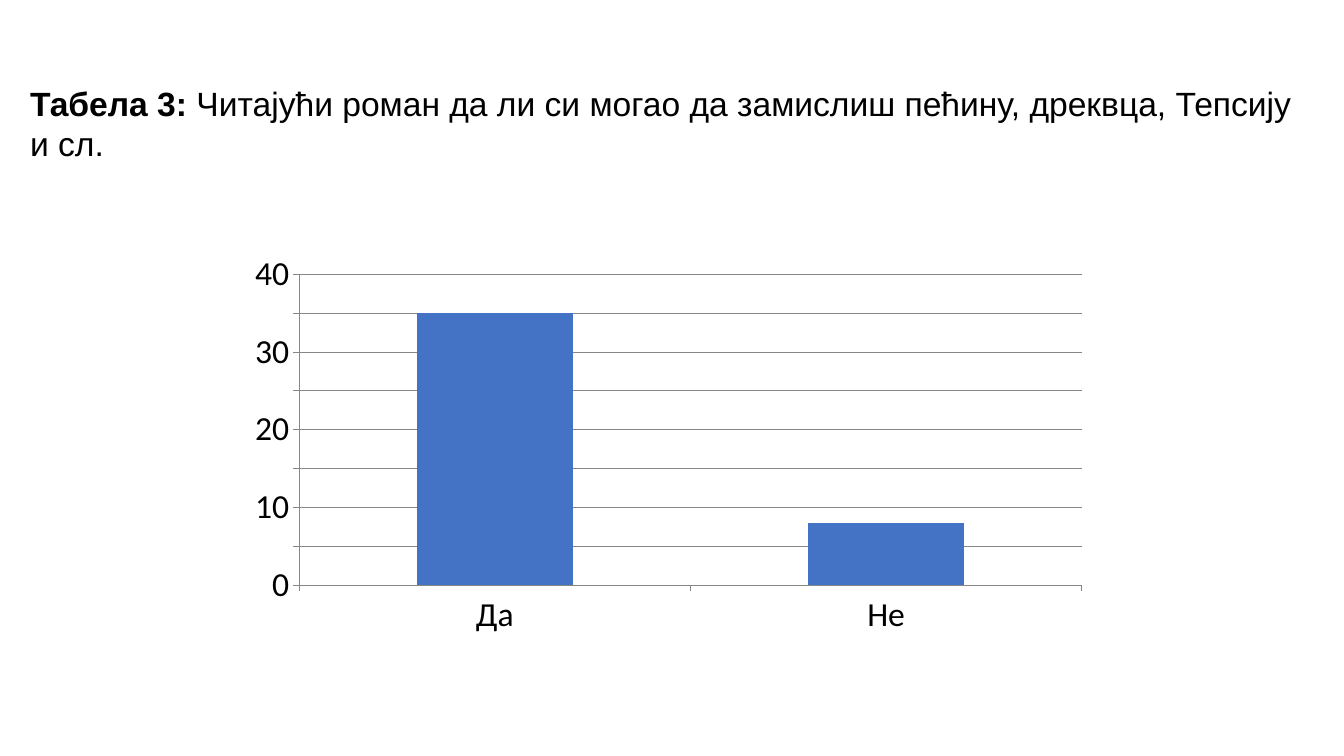
from pptx import Presentation, util as u
from pptx.chart.data import CategoryChartData
from pptx.dml.color import RGBColor
from pptx.enum import chart as ch, text

# Content
HEADING = [
    [("Табела 3:", True),
     (" Читајући роман да ли си могао да замислиш пећину, дреквца, Тепсију", False)],
    [("и сл.", False)],
]
ANSWERS = {"Да": 35, "Не": 8}
HEADING_BOX = (0.2, 0.39, 12.93, 1.31)
CHART_BOX = (2.36, 2.44, 8.54, 3.95)

BLACK = RGBColor(0x00, 0x00, 0x00)
BLUE = RGBColor(0x44, 0x72, 0xC4)
GRAY = RGBColor(0x87, 0x87, 0x87)
SIZE = u.Pt(24)


def apply(target, **values):
    for name, value in values.items():
        setattr(target, name, value)


def box(lengths):
    return [u.Inches(n) for n in lengths]


prs = Presentation()
apply(prs, slide_width=u.Inches(13.33), slide_height=u.Inches(7.5))
s = prs.slides.add_slide(prs.slide_layouts[6])

# Column chart
data = CategoryChartData()
data.categories = list(ANSWERS)
data.add_series("Series 1", list(ANSWERS.values()))
chart = s.shapes.add_chart(
    ch.XL_CHART_TYPE.COLUMN_CLUSTERED, *box(CHART_BOX), data).chart
apply(chart, has_legend=False, has_title=False)
apply(chart.font, size=SIZE, name="Calibri")
chart.font.color.rgb = BLACK
plot = chart.plots[0]
apply(plot, vary_by_categories=False, gap_width=150)
fill = plot.series[0].format.fill
fill.solid()
fill.fore_color.rgb = BLUE

# Axes and gridlines
apply(chart.value_axis, minimum_scale=0, maximum_scale=40, major_unit=5,
      has_major_gridlines=True)
for axis in (chart.category_axis, chart.value_axis):
    axis.major_tick_mark = ch.XL_TICK_MARK.OUTSIDE
for part in (chart.category_axis, chart.value_axis,
             chart.value_axis.major_gridlines):
    part.format.line.color.rgb = GRAY
    part.format.line.width = u.Pt(0.75)

# Heading
tf = s.shapes.add_textbox(*box(HEADING_BOX)).text_frame
apply(tf, word_wrap=True, vertical_anchor=text.MSO_ANCHOR.BOTTOM,
      margin_bottom=u.Inches(0.08))
for i, runs in enumerate(HEADING):
    p = tf.add_paragraph() if i else tf.paragraphs[0]
    p.alignment = text.PP_ALIGN.JUSTIFY
    for words, bold in runs:
        r = p.add_run()
        r.text = words
        apply(r.font, name="Arial", size=SIZE, bold=bold)
        r.font.color.rgb = BLACK

prs.save("out.pptx")
